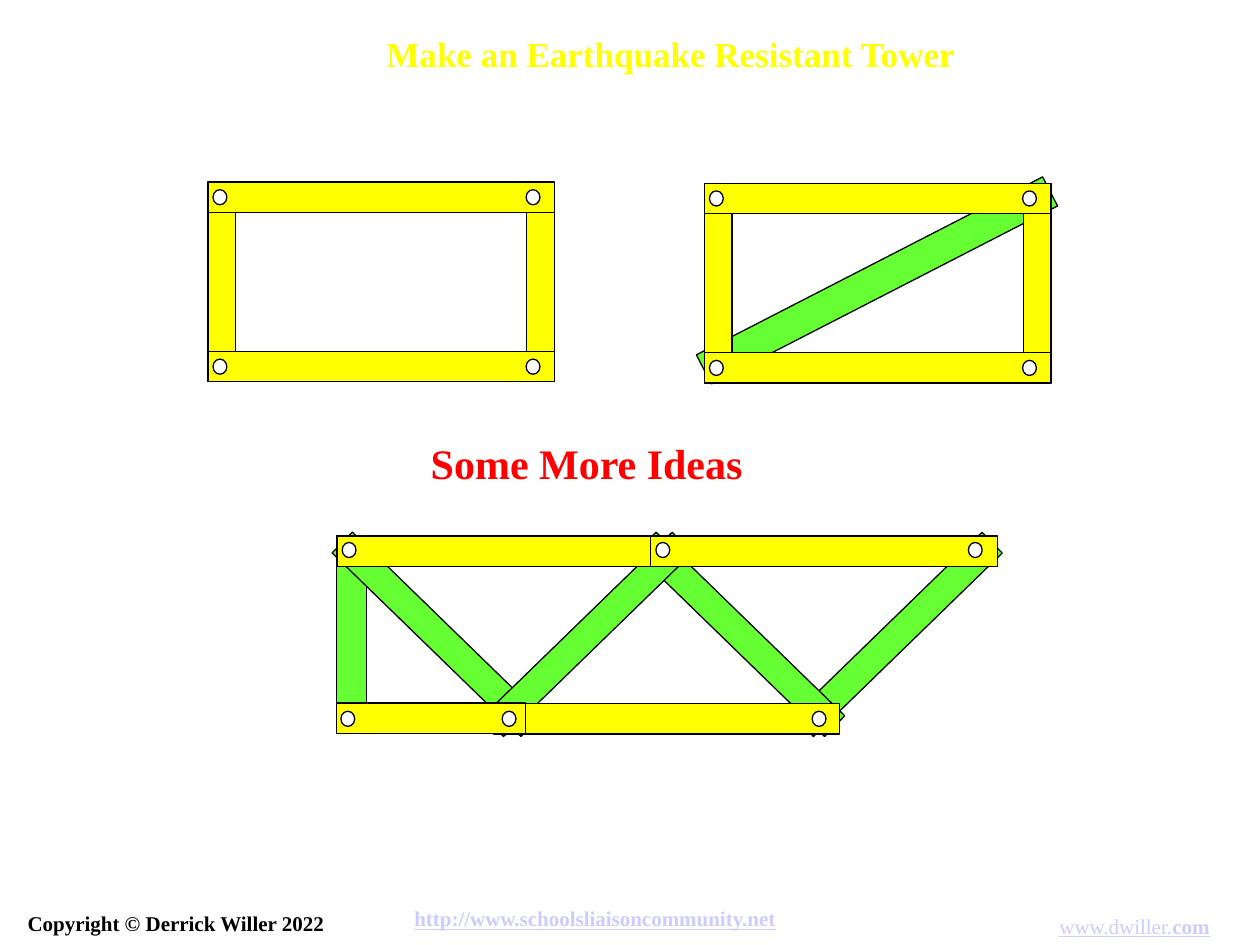
from pptx import Presentation
from pptx.dml.color import RGBColor
from pptx.enum.shapes import MSO_SHAPE as SHAPE
from pptx.enum.text import MSO_ANCHOR as ANCHOR, MSO_AUTO_SIZE as AUTO, PP_ALIGN as ALIGN
from pptx.util import Inches, Pt

COLORS = {
    "yellow": "FFFF00", "green": "66FF33", "white": "FFFFFF",
    "black": "000000", "red": "FF0000", "link": "CCCCFF",
}
FONT = "Times New Roman"

# The slide is a grid of 100 columns by 75 rows
COLS, ROWS = 100, 75
CELL = Inches(0.1)
STRIP = 2.4  # usual width of a strip


def grid(n):
    return round(n * CELL)


def rgb(name):
    return RGBColor.from_string(COLORS[name])


def add_part(slide, kind, cx, cy, w, h, color, angle):
    """Outlined shape placed by its centre."""
    sp = slide.shapes.add_shape(
        kind, grid(cx - w / 2), grid(cy - h / 2), grid(w), grid(h))
    sp.rotation = angle
    sp.shadow.inherit = False
    sp.fill.solid()
    sp.fill.fore_color.rgb = rgb(color)
    sp.line.color.rgb = rgb("black")
    sp.line.width = Pt(0.75)


def add_strip(slide, cx, cy, length, color="yellow", angle=90, width=STRIP):
    add_part(slide, SHAPE.RECTANGLE, cx, cy, width, length, color, angle)


def add_pins(slide, cy, centers):
    for cx in centers:
        add_part(slide, SHAPE.OVAL, cx, cy, 1.2, 1.1, "white", 90)


def add_frame(slide, left, top):
    """Two posts, with a pinned rail at the top and the bottom."""
    for dx in (1.1, 26.4):
        add_strip(slide, left + dx, top + 7.9, 15.8, angle=180, width=2.2)
    for dy in (1.15, 14.6):
        add_strip(slide, left + 13.75, top + dy, 27.5)
        add_pins(slide, top + dy, (left + 0.95, left + 25.8))


def add_truss(slide):
    # Post and diagonals
    add_strip(slide, 71.25, 50.35, 20.9, "green", 225.8, 2.3)
    add_strip(slide, 27.9, 50, 15, "green", 0)
    for cx, angle in ((58.75, 134.2), (34.65, 134.2), (46.65, 225.8)):
        add_strip(slide, cx, 50.35, 20.9, "green", angle, 2.3)
    # Rails
    for cx, cy, length in ((40.5, 43.75, 27.5), (52.9, 57.05, 27.5),
                           (34.2, 57, 15), (65.4, 43.75, 27.5)):
        add_strip(slide, cx, cy, length)
    add_pins(slide, 43.65, (27.7, 52.6, 77.4))
    add_pins(slide, 57.05, (27.6, 40.4, 65))


def set_text(sp, runs, size, color, align=ALIGN.LEFT, wrap=False):
    """Fill a box with one paragraph of (text, bold) runs."""
    tf = sp.text_frame
    tf.word_wrap = wrap
    tf.auto_size = AUTO.NONE
    tf.vertical_anchor = ANCHOR.TOP
    p = tf.paragraphs[0]
    p.alignment = align
    p.font.name = FONT
    p.font.size = Pt(size)
    p.font.color.rgb = rgb(color)
    p.font.underline = color == "link"
    for text, bold in runs:
        r = p.add_run()
        r.text = text
        r.font.bold = bold


def add_label(slide, left, top, w, h, runs, size, color, wrap=False):
    sp = slide.shapes.add_textbox(grid(left), grid(top), grid(w), grid(h))
    set_text(sp, runs, size, color, wrap=wrap)


def add_title(slide, text):
    sp = slide.shapes.title
    sp.left, sp.top, sp.width, sp.height = map(grid, (29.5, 2.1, 47.5, 4.4))
    set_text(sp, [(text, True)], 20, "yellow", ALIGN.CENTER)


def main():
    prs = Presentation()
    prs.slide_width, prs.slide_height = grid(COLS), grid(ROWS)
    slide = prs.slides.add_slide(prs.slide_layouts[5])
    add_title(slide, "Make an Earthquake Resistant Tower")

    # Footer
    add_label(slide, 31.9, 71.4, 46.4, 3,
              [("http://www.schoolsliaisoncommunity.net", True)], 12, "link", wrap=True)
    add_label(slide, 1.2, 71.8, 25.9, 3,
              [("Copyright © Derrick Willer 2022", True)], 12, "black")
    add_label(slide, 83.1, 72, 14.4, 3,
              [("www.dwiller.", False), ("com", True)], 12, "link", wrap=True)

    # Plain frame, then the braced one
    add_frame(slide, 16.5, 14.5)
    add_strip(slide, 69.6, 22.25, 30.9, "green", 242.8, 2.6)
    add_frame(slide, 55.9, 14.6)

    # More ideas
    add_truss(slide)
    add_label(slide, 33.2, 34.2, 26.8, 5, [("Some More Ideas", True)], 24, "red")

    prs.save("out.pptx")


main()
